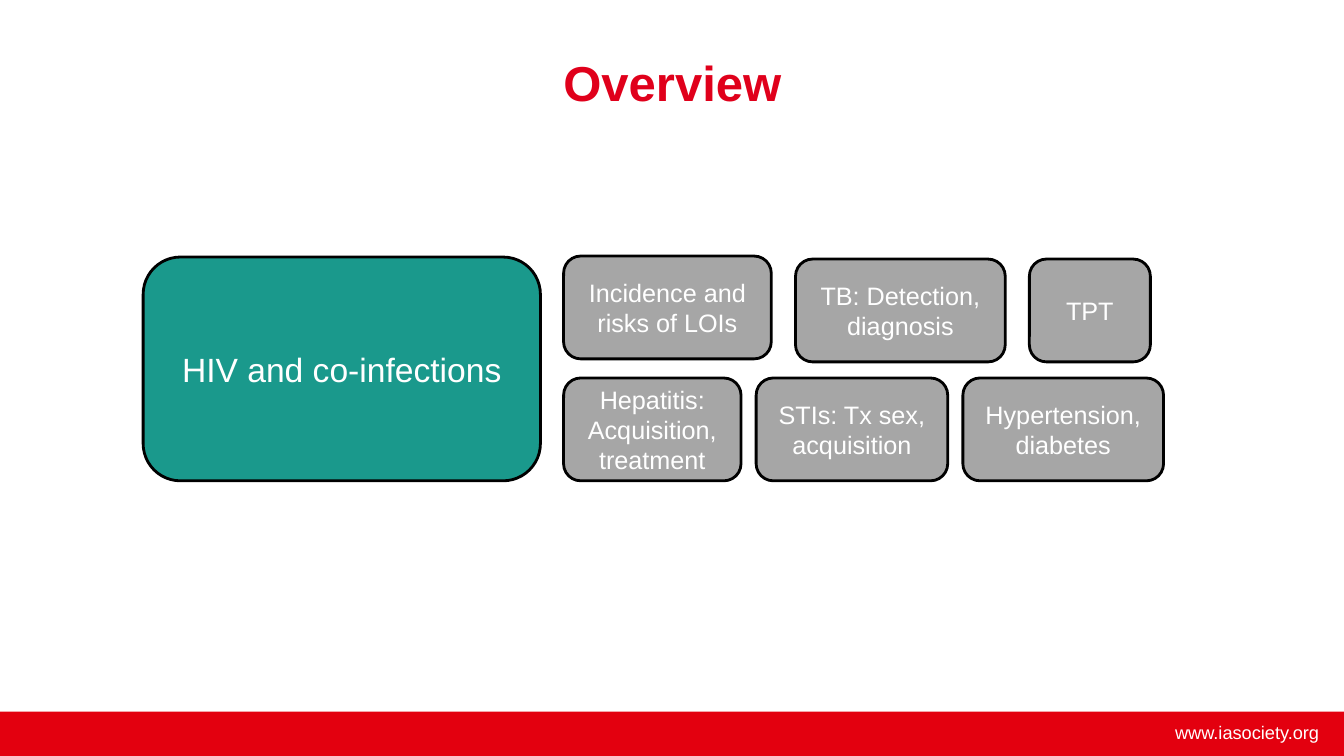
from pptx import Presentation
from pptx.dml.color import RGBColor
from pptx.enum.shapes import MSO_SHAPE as Shape
from pptx.enum.text import MSO_ANCHOR as Anchor, PP_ALIGN as Align
from pptx.util import Inches, Pt

# Content
TITLE = "Overview"
WEBSITE = "www.iasociety.org"
THEME = "HIV and co-infections"
# Each row: gap between boxes, then (text, top, width) from left to right
TOPIC_ROWS = [
    (0.24, [("Incidence and risks of LOIs", 2.54, 2.06),
            ("TB: Detection, diagnosis", 2.57, 2.08),
            ("TPT", 2.57, 1.2)]),
    (0.15, [("Hepatitis: Acquisition, treatment", 3.75, 1.76),
            ("STIs: Tx sex, acquisition", 3.75, 1.9),
            ("Hypertension, diabetes", 3.75, 1.99)]),
]
TOPIC_LEFT, TOPIC_HEIGHT = 5.59, 1.02
COLORS = {"footer": "E3000F", "title": "E0001B", "theme": "1A998C",
          "topic": "A6A6A6", "outline": "000000", "white": "FFFFFF"}
FONT = "Arial"


def color(name):
    return RGBColor.from_string(COLORS[name])


def write(holder, text, size, ink="white", align=Align.CENTER,
          anchor=Anchor.MIDDLE, bold=False):
    frame = holder.text_frame
    frame.word_wrap = True
    frame.vertical_anchor = anchor
    frame.text = text
    paragraph = frame.paragraphs[0]
    paragraph.alignment = align
    font = paragraph.runs[0].font
    font.name, font.size, font.bold = FONT, Pt(size), bold
    font.color.rgb = color(ink)


def add_block(slide, kind, box, fill):
    block = slide.shapes.add_shape(kind, *map(Inches, box))
    block.shadow.inherit = False
    block.fill.solid()
    block.fill.fore_color.rgb = color(fill)
    block.line.fill.background()
    return block


def add_card(slide, box, fill, text, size):
    card = add_block(slide, Shape.ROUNDED_RECTANGLE, box, fill)
    card.line.color.rgb = color("outline")
    card.line.width = Pt(2)
    write(card, text, size)


def main():
    deck = Presentation()
    deck.slide_width, deck.slide_height = Inches(13.33), Inches(7.5)
    slide = deck.slides.add_slide(deck.slide_layouts[6])

    # Footer band with website
    add_block(slide, Shape.RECTANGLE, (0, 7.06, 13.33, 0.44), "footer")
    website = slide.shapes.add_textbox(*map(Inches, (10.43, 7.11, 2.75, 0.32)))
    write(website, WEBSITE, 13, align=Align.RIGHT, anchor=Anchor.TOP)

    # Title
    title = slide.shapes.add_textbox(*map(Inches, (1.67, 0, 10, 1.62)))
    write(title, TITLE, 35, ink="title", bold=True)

    # Theme and its topics
    add_card(slide, (1.42, 2.55, 3.94, 2.22), "theme", THEME, 24)
    for gap, topics in TOPIC_ROWS:
        left = TOPIC_LEFT
        for topic, top, width in topics:
            add_card(slide, (left, top, width, TOPIC_HEIGHT), "topic", topic, 18)
            left += width + gap

    deck.save("out.pptx")


if __name__ == "__main__":
    main()
